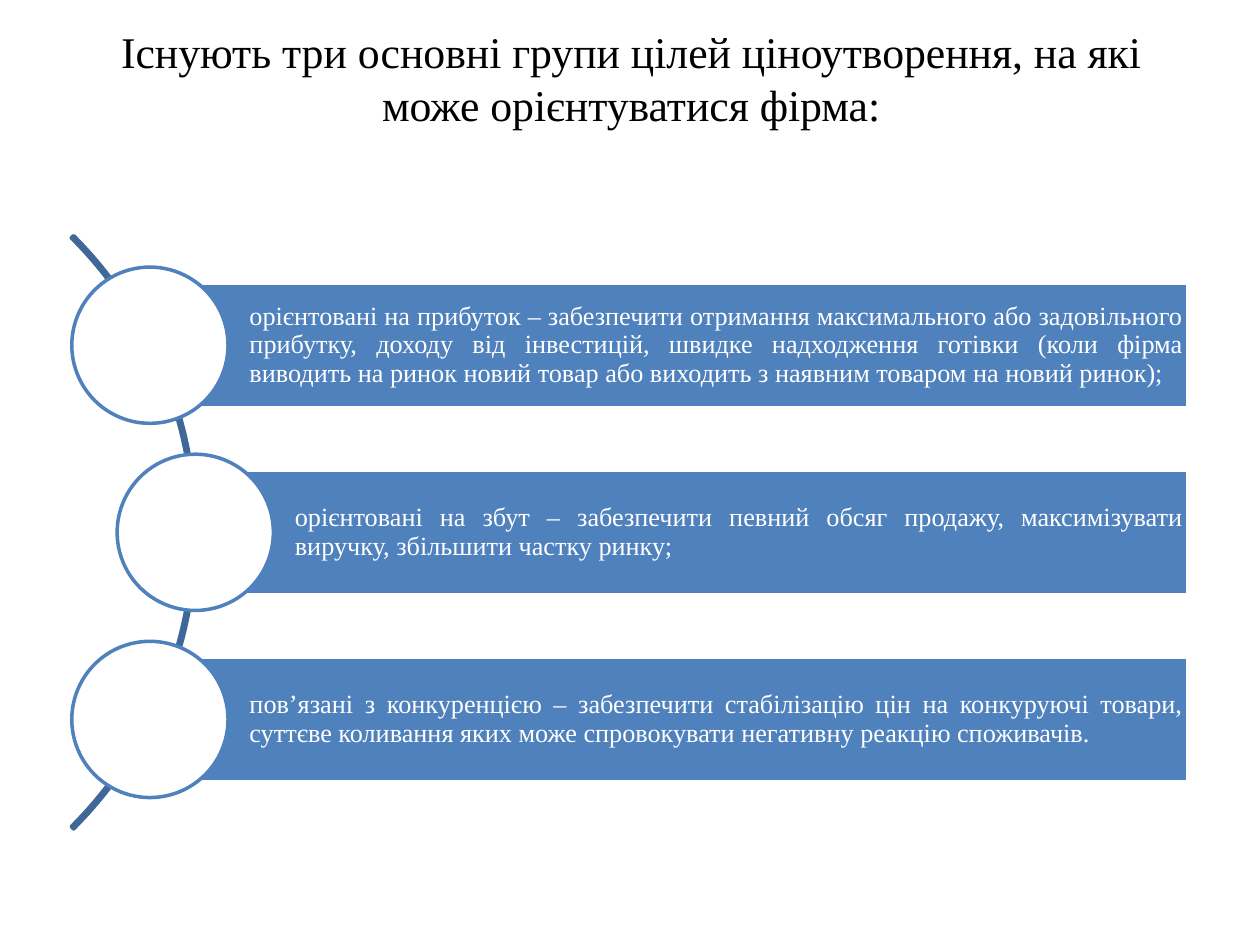
from pptx import Presentation
from pptx import util as u
from pptx.dml.color import RGBColor
from pptx.enum import shapes, text

FONT = "Times New Roman"
BLUE, DARK_BLUE, WHITE, BLACK = "4F81BD", "3F6797", "FFFFFF", "000000"
TITLE = "Існують три основні групи цілей ціноутворення, на які може орієнтуватися фірма:"
GOALS = [
    "орієнтовані на прибуток – забезпечити отримання максимального або задовільного "
    "прибутку, доходу від інвестицій, швидке надходження готівки (коли фірма виводить "
    "на ринок новий товар або виходить з наявним товаром на новий ринок);",
    "орієнтовані на збут – забезпечити певний обсяг продажу, максимізувати виручку, "
    "збільшити частку ринку;",
    "пов’язані з конкуренцією – забезпечити стабілізацію цін на конкуруючі товари, "
    "суттєве коливання яких може спровокувати негативну реакцію споживачів.",
]
INDENTS = [0, 0.36, 0]
FIRST_CENTER, ROW_PITCH = 2.74, 1.485
BAR_LEFT, BAR_RIGHT, BAR_HEIGHT = 1.19, 9.43, 0.99
DIAMETER = 1.24
ARC_SIZE, ARC_RIGHT = 6.66, 1.56


def rgb(value):
    """Turn a hex string into a colour."""
    return RGBColor.from_string(value)


def write(frame, words, size, color, align, insets):
    """Fill a text frame with one wrapped, vertically centred paragraph."""
    frame.word_wrap = True
    frame.vertical_anchor = text.MSO_ANCHOR.MIDDLE
    (frame.margin_left, frame.margin_top,
     frame.margin_right, frame.margin_bottom) = map(u.Inches, insets)
    frame.text = words
    paragraph = frame.paragraphs[0]
    paragraph.alignment = align
    font = paragraph.runs[0].font
    font.name, font.size, font.color.rgb = FONT, u.Pt(size), rgb(color)
    return paragraph


def add_figure(slide, preset, box, line, fill=None):
    """Add a flat preset shape with a two-point outline."""
    figure = slide.shapes.add_shape(preset, *map(u.Inches, box))
    figure.shadow.inherit = False
    figure.line.color.rgb, figure.line.width = rgb(line), u.Pt(2)
    if fill:
        figure.fill.solid()
        figure.fill.fore_color.rgb = rgb(fill)
    else:
        figure.fill.background()
    return figure


def add_title(slide):
    """Add the centred heading."""
    heading = slide.shapes.add_textbox(*map(u.Inches, (0.51, -0.01, 9, 1.25)))
    write(heading.text_frame, TITLE, 25, BLACK, text.PP_ALIGN.CENTER, (0.1, 0.05, 0.1, 0.05))


def add_arc(slide):
    """Add the thin arc that links the circles."""
    top = FIRST_CENTER + ROW_PITCH - ARC_SIZE / 2
    arc = add_figure(slide, shapes.MSO_SHAPE.BLOCK_ARC,
                     (ARC_RIGHT - ARC_SIZE, top, ARC_SIZE, ARC_SIZE), DARK_BLUE)
    for index, value in enumerate((189, 27, 0.004)):
        arc.adjustments[index] = value


def add_goal(slide, words, indent, center):
    """Add one goal bar with the circle at its left end."""
    left = BAR_LEFT + indent
    bar = add_figure(slide, shapes.MSO_SHAPE.RECTANGLE,
                     (left, center - BAR_HEIGHT / 2, BAR_RIGHT - left, BAR_HEIGHT), WHITE, BLUE)
    paragraph = write(bar.text_frame, words, 15, WHITE,
                      text.PP_ALIGN.JUSTIFY, (0.79, 0.04, 0.04, 0.04))
    paragraph.line_spacing = 0.9
    add_figure(slide, shapes.MSO_SHAPE.OVAL,
               (left - DIAMETER / 2, center - DIAMETER / 2, DIAMETER, DIAMETER), BLUE, WHITE)


def main():
    """Build and save the slide."""
    deck = Presentation()
    deck.slide_width, deck.slide_height = u.Inches(10), u.Inches(7.5)
    slide = deck.slides.add_slide(deck.slide_layouts[6])
    add_title(slide)
    add_arc(slide)
    for row, (words, indent) in enumerate(zip(GOALS, INDENTS)):
        add_goal(slide, words, indent, FIRST_CENTER + row * ROW_PITCH)
    deck.save("out.pptx")


if __name__ == "__main__":
    main()
